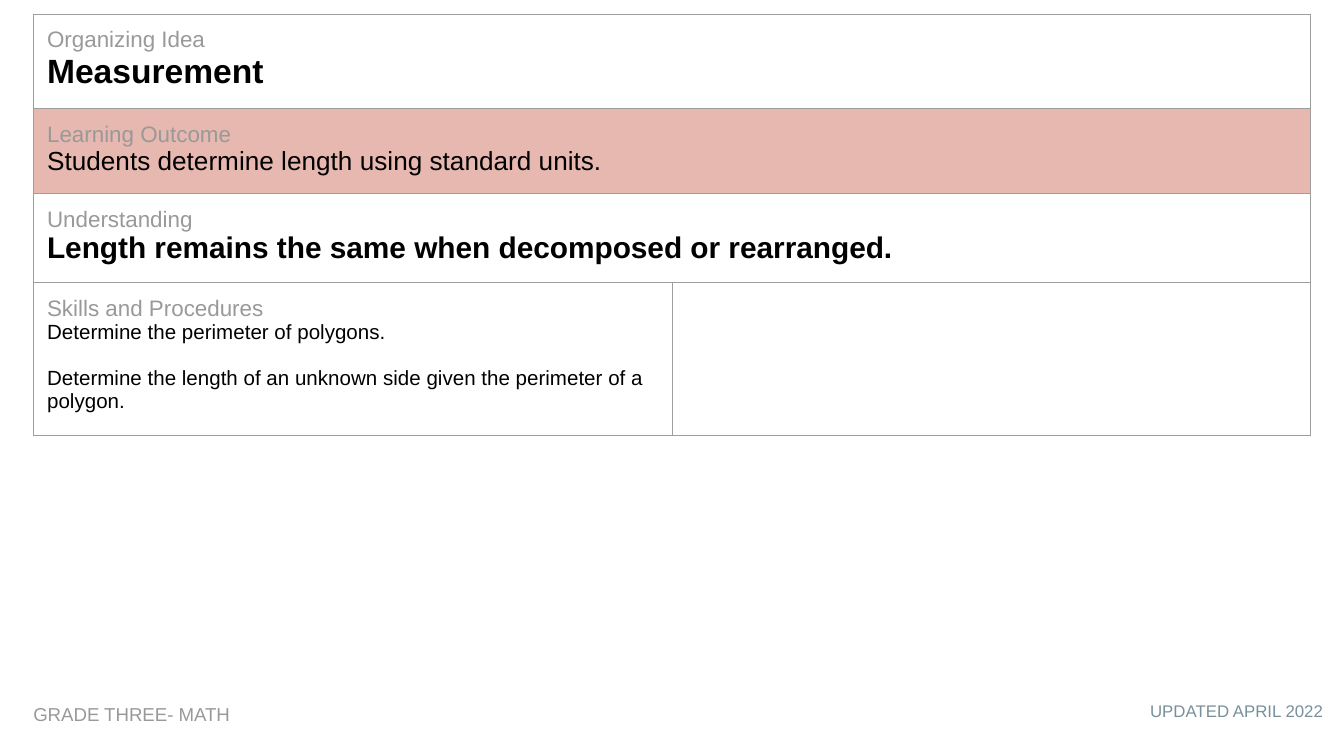
import pptx
import pptx.util
import pptx.dml.color
import pptx.enum.text
import pptx.oxml.ns
import lxml.etree

Cm = pptx.util.Cm
Pt = pptx.util.Pt
ALIGN = pptx.enum.text.PP_ALIGN
GRAY = "999999"
BLACK = "000000"
PAD = Cm(0.25)


def color(code):
    return pptx.dml.color.RGBColor.from_string(code)


def write(para, text, size, code, bold=False):
    run = para.add_run()
    run.text = text
    run.font.name = "Arial"
    run.font.size = Pt(size)
    run.font.bold = bold
    run.font.color.rgb = color(code)


def pad(item):
    item.margin_left = item.margin_right = PAD
    item.margin_top = item.margin_bottom = PAD


def border(cell, code="9E9E9E", width=0.75):
    props = cell._tc.get_or_add_tcPr()
    for side in ("lnL", "lnR", "lnT", "lnB"):
        line = lxml.etree.SubElement(
            props, pptx.oxml.ns.qn("a:" + side), w=str(Pt(width)))
        fill = lxml.etree.SubElement(line, pptx.oxml.ns.qn("a:solidFill"))
        lxml.etree.SubElement(fill, pptx.oxml.ns.qn("a:srgbClr"), val=code)


def fill_cell(cell, label, lines, size, bold):
    frame = cell.text_frame
    write(frame.paragraphs[0], label, 12, GRAY)
    for index, line in enumerate(lines):
        para = frame.add_paragraph()
        if index:
            para.space_before = Pt(12.5)
        write(para, line, size, BLACK, bold)


def add_grid(slide, left, top, width, rows):
    high = sum(row[0] for row in rows)
    grid = slide.shapes.add_table(
        len(rows), 2, Cm(left), Cm(top), Cm(width), Cm(high)).table
    grid.first_row = grid.horz_banding = False
    for col in grid.columns:
        col.width = Cm(width / 2)
    for index, (height, shade, wide, label, lines, size, bold) in enumerate(rows):
        grid.rows[index].height = Cm(height)
        for cell in grid.rows[index].cells:
            pad(cell)
            border(cell)
            if shade:
                cell.fill.solid()
                cell.fill.fore_color.rgb = color(shade)
            else:
                cell.fill.background()
        first = grid.cell(index, 0)
        if wide:
            first.merge(grid.cell(index, 1))
        fill_cell(first, label, lines, size, bold)


def add_note(slide, left, top, width, height, text, size, code, align):
    box = slide.shapes.add_textbox(Cm(left), Cm(top), Cm(width), Cm(height))
    frame = box.text_frame
    frame.word_wrap = True
    pad(frame)
    frame.paragraphs[0].alignment = align
    write(frame.paragraphs[0], text, size, code)


def main():
    deck = pptx.Presentation()
    deck.slide_width = Cm(25.4)
    deck.slide_height = Cm(14.29)
    slide = deck.slides.add_slide(deck.slide_layouts[6])
    rows = [
        (1.78, None, True, "Organizing Idea", ["Measurement"], 18, True),
        (1.61, "E6B8AF", True, "Learning Outcome",
         ["Students determine length using standard units."], 14, False),
        (1.68, None, True, "Understanding",
         ["Length remains the same when decomposed or rearranged."], 16, True),
        (2.89, None, False, "Skills and Procedures",
         ["Determine the perimeter of polygons.",
          "Determine the length of an unknown side given the perimeter of a polygon."],
         11, False),
    ]
    add_note(slide, 18.39, 13.06, 6.86, 0.89,
             "UPDATED APRIL 2022", 9, "78909C", ALIGN.RIGHT)
    add_grid(slide, 0.64, 0.27, 24.13, rows)
    add_note(slide, 0.38, 13.08, 7.65, 0.94,
             "GRADE THREE- MATH", 10, GRAY, ALIGN.LEFT)
    deck.save("out.pptx")


if __name__ == "__main__":
    main()
